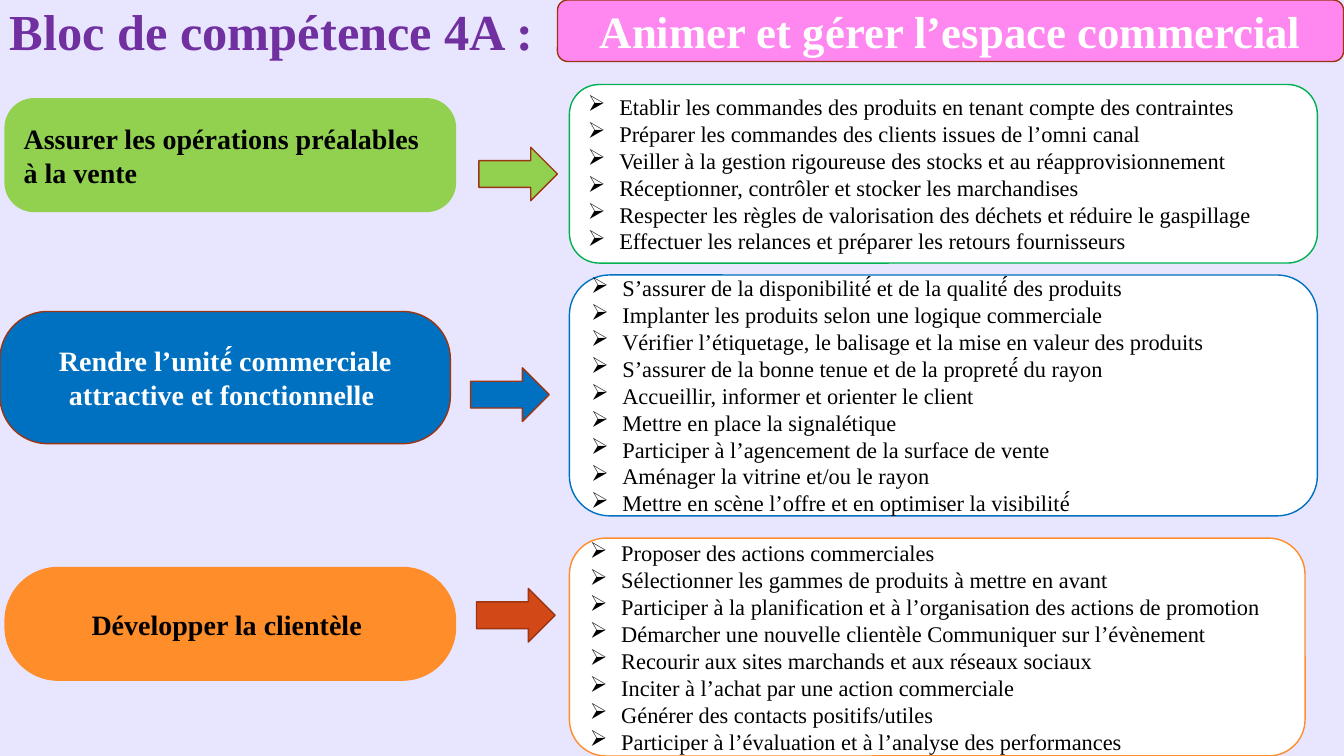
from dataclasses import dataclass

import pptx
import pptx.dml.color
import pptx.enum.shapes
import pptx.enum.text
import pptx.oxml
import pptx.oxml.ns
import pptx.shapes.autoshape
import pptx.slide
import pptx.text.text
import pptx.util

Cm = pptx.util.Cm
Align = pptx.enum.text.PP_ALIGN
Preset = pptx.enum.shapes.MSO_SHAPE


@dataclass(frozen=True)
class Theme:
    font: str = "Times New Roman"
    background: str = "E8E5FF"
    purple: str = "7030A0"
    pink: str = "FF87F0"
    green: str = "92D050"
    dark_green: str = "00B050"
    blue: str = "0070C0"
    orange: str = "FF8D2A"
    rust: str = "D34817"
    outline: str = "9C3511"
    white: str = "FFFFFF"
    black: str = "000000"
    title_size: int = 36
    banner_size: int = 32
    label_size: int = 20
    task_size: int = 16


@dataclass(frozen=True)
class Box:
    left: float
    top: float
    width: float
    height: float


@dataclass(frozen=True)
class Label:
    text: str
    box: Box
    rounding: float
    fill: str
    line: str
    color: str
    align: Align = Align.CENTER


@dataclass(frozen=True)
class Skill:
    label: Label
    arrow_left: float
    arrow_fill: str
    panel: Box
    panel_line: str
    tasks: tuple[str, ...]


THEME = Theme()
ARROW_TOP, ARROW_PITCH = 3.71, 5.56
ARROW_WIDTH, ARROW_HEIGHT = 1.98, 1.35
DEFAULT_ROUNDING = 0.167

BANNER = Label("Animer et gérer l’espace commercial", Box(14.05, 0, 19.81, 1.55),
               DEFAULT_ROUNDING, THEME.pink, THEME.outline, THEME.white)

SKILLS = (
    Skill(
        Label("Assurer les opérations préalables à la vente", Box(0.13, 2.49, 11.35, 2.84),
              0.258, THEME.green, THEME.green, THEME.black, Align.LEFT),
        12.07, THEME.green, Box(14.35, 2.13, 18.85, 4.5), THEME.dark_green,
        (
            "Etablir les commandes des produits en tenant compte des contraintes",
            "Préparer les commandes des clients issues de l’omni canal",
            "Veiller à la gestion rigoureuse des stocks et au réapprovisionnement",
            "Réceptionner, contrôler et stocker les marchandises",
            "Respecter les règles de valorisation des déchets et réduire le gaspillage",
            "Effectuer les relances et préparer les retours fournisseurs",
        ),
    ),
    Skill(
        Label("Rendre l’unité́ commerciale attractive et fonctionnelle ",
              Box(0, 7.85, 11.35, 3.33), 0.36, THEME.blue, THEME.outline, THEME.white),
        11.86, THEME.blue, Box(14.35, 6.93, 18.85, 6.07), THEME.blue,
        (
            "S’assurer de la disponibilité́ et de la qualité́ des produits",
            "Implanter les produits selon une logique commerciale",
            "Vérifier l’étiquetage, le balisage et la mise en valeur des produits",
            "S’assurer de la bonne tenue et de la propreté́ du rayon",
            "Accueillir, informer et orienter le client",
            "Mettre en place la signalétique",
            "Participer à l’agencement de la surface de vente",
            "Aménager la vitrine et/ou le rayon",
            "Mettre en scène l’offre et en optimiser la visibilité́",
        ),
    ),
    Skill(
        Label("Développer la clientèle ", Box(0.13, 14.3, 11.35, 2.84),
              0.472, THEME.orange, THEME.orange, THEME.black),
        12.01, THEME.rust, Box(14.35, 13.56, 18.54, 5.49), THEME.orange,
        (
            "Proposer des actions commerciales",
            "Sélectionner les gammes de produits à mettre en avant",
            "Participer à la planification et à l’organisation des actions de promotion",
            "Démarcher une nouvelle clientèle Communiquer sur l’évènement",
            "Recourir aux sites marchands et aux réseaux sociaux",
            "Inciter à l’achat par une action commerciale",
            "Générer des contacts positifs/utiles",
            "Participer à l’évaluation et à l’analyse des performances",
        ),
    ),
)


def rgb(color: str) -> pptx.dml.color.RGBColor:
    return pptx.dml.color.RGBColor.from_string(color)


def place(box: Box) -> tuple[pptx.util.Length, ...]:
    return Cm(box.left), Cm(box.top), Cm(box.width), Cm(box.height)


def style_text(paragraph: pptx.text.text._Paragraph, size: int, color: str,
               bold: bool = False, align: Align = Align.LEFT) -> None:
    paragraph.alignment = align
    font = paragraph.font
    font.name, font.size, font.bold = THEME.font, pptx.util.Pt(size), bold
    font.color.rgb = rgb(color)


def add_bullet(paragraph: pptx.text.text._Paragraph) -> None:
    properties = paragraph._p.get_or_add_pPr()
    properties.set("marL", str(Cm(0.79)))
    properties.set("indent", str(-Cm(0.79)))
    bullet = pptx.oxml.parse_xml(f'<a:buChar {pptx.oxml.ns.nsdecls("a")} char="➢"/>')
    properties.append(bullet)


def draw_shape(slide: pptx.slide.Slide, preset: Preset, box: Box, fill: str,
               line: str) -> pptx.shapes.autoshape.Shape:
    shape = slide.shapes.add_shape(preset, *place(box))
    shape.shadow.inherit = False
    shape.fill.solid()
    shape.fill.fore_color.rgb = rgb(fill)
    shape.line.color.rgb = rgb(line)
    shape.line.width = pptx.util.Pt(1)
    shape.text_frame.word_wrap = True
    shape.text_frame.vertical_anchor = pptx.enum.text.MSO_ANCHOR.MIDDLE
    return shape


def draw_label(slide: pptx.slide.Slide, label: Label, size: int) -> None:
    shape = draw_shape(slide, Preset.ROUNDED_RECTANGLE, label.box, label.fill, label.line)
    shape.adjustments[0] = label.rounding
    paragraph = shape.text_frame.paragraphs[0]
    paragraph.text = label.text
    style_text(paragraph, size, label.color, bold=True, align=label.align)


def draw_tasks(slide: pptx.slide.Slide, skill: Skill) -> None:
    panel = draw_shape(slide, Preset.ROUNDED_RECTANGLE, skill.panel, THEME.white,
                       skill.panel_line)
    panel.text_frame.text = "\n".join(skill.tasks)
    for paragraph in panel.text_frame.paragraphs:
        add_bullet(paragraph)
        style_text(paragraph, THEME.task_size, THEME.black)


def draw_title(slide: pptx.slide.Slide) -> None:
    title = slide.shapes.add_textbox(*place(Box(0, 0, 33.87, 3.33))).text_frame
    title.word_wrap = True
    title.margin_left, title.margin_right = Cm(0.25), Cm(0.2)
    title.margin_top = title.margin_bottom = 0
    title.text = "Bloc de compétence 4A :"
    style_text(title.paragraphs[0], THEME.title_size, THEME.purple, bold=True)


def main() -> None:
    deck = pptx.Presentation()
    deck.slide_width, deck.slide_height = Cm(33.87), Cm(19.05)
    slide = deck.slides.add_slide(deck.slide_layouts[6])
    slide.background.fill.solid()
    slide.background.fill.fore_color.rgb = rgb(THEME.background)

    # Heading
    draw_title(slide)
    draw_label(slide, BANNER, THEME.banner_size)

    # One row per skill: label, arrow, tasks
    for row, skill in enumerate(SKILLS):
        draw_label(slide, skill.label, THEME.label_size)
        arrow = Box(skill.arrow_left, ARROW_TOP + row * ARROW_PITCH, ARROW_WIDTH, ARROW_HEIGHT)
        draw_shape(slide, Preset.RIGHT_ARROW, arrow, skill.arrow_fill, THEME.outline)
        draw_tasks(slide, skill)

    deck.save("out.pptx")


if __name__ == "__main__":
    main()
